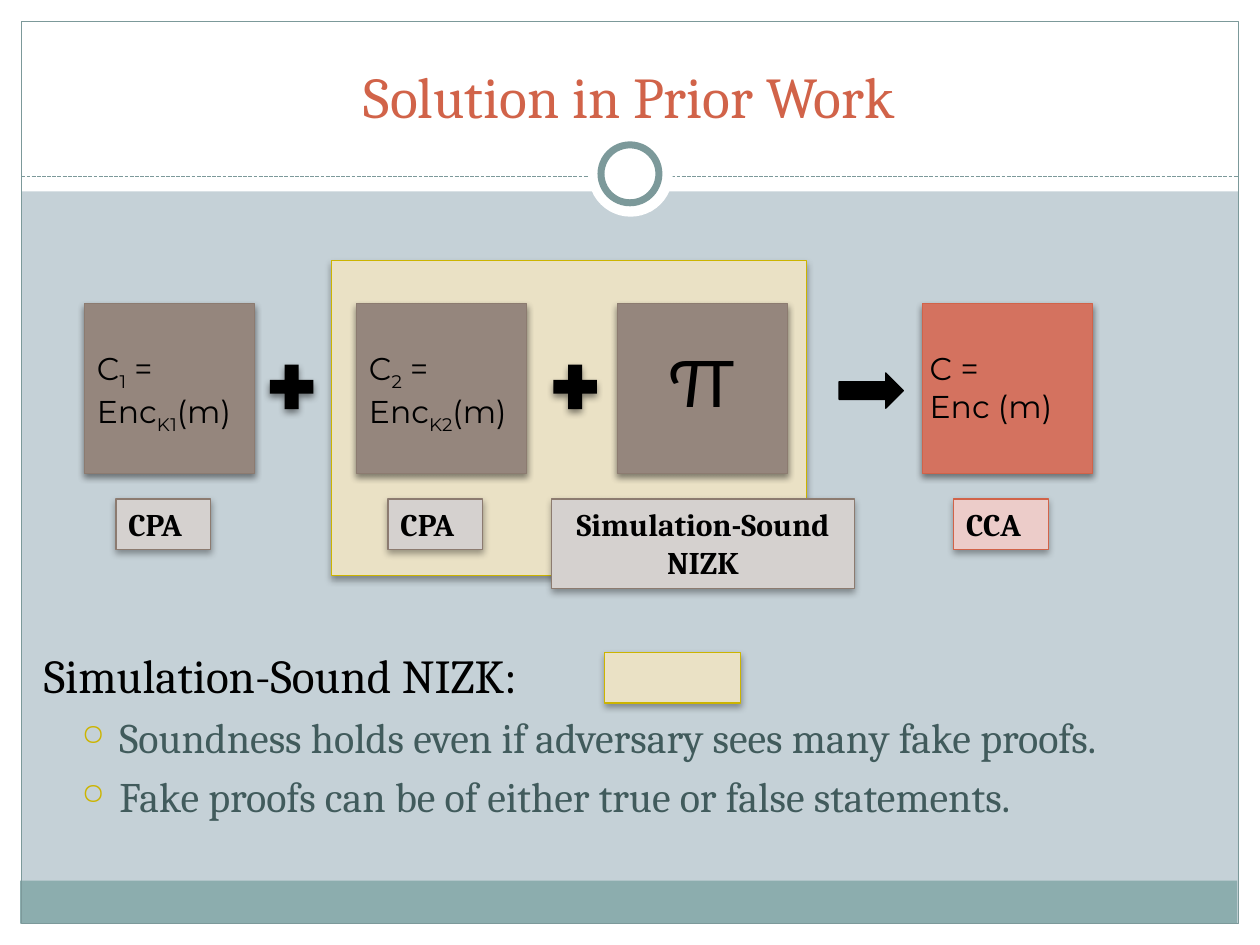
from dataclasses import dataclass

from lxml import etree
from pptx import Presentation
from pptx.dml.color import RGBColor
from pptx.enum.dml import MSO_LINE
from pptx.enum.shapes import MSO_CONNECTOR, MSO_SHAPE
from pptx.enum.text import MSO_ANCHOR, PP_ALIGN
from pptx.oxml.ns import qn
from pptx.util import Inches, Pt

RECT, OVAL = MSO_SHAPE.RECTANGLE, MSO_SHAPE.OVAL
PLUS, ARROW = MSO_SHAPE.MATH_PLUS, MSO_SHAPE.RIGHT_ARROW
LEFT, CENTER = PP_ALIGN.LEFT, PP_ALIGN.CENTER
TOP, BOTTOM = MSO_ANCHOR.TOP, MSO_ANCHOR.BOTTOM

WHITE = RGBColor(0xFF, 0xFF, 0xFF)
BLACK = RGBColor(0x00, 0x00, 0x00)
MIST = RGBColor(0xC5, 0xD1, 0xD7)
TEAL = RGBColor(0x8C, 0xAD, 0xAE)
TEAL_EDGE = RGBColor(0x7C, 0x99, 0x9A)
TEAL_TEXT = RGBColor(0x41, 0x5B, 0x5C)
RUST = RGBColor(0xD1, 0x63, 0x49)
RUST_FILL = RGBColor(0xD4, 0x72, 0x5F)
RUST_PALE = RGBColor(0xEC, 0xCC, 0xC9)
TAUPE_FILL = RGBColor(0x95, 0x86, 0x7D)
TAUPE_EDGE = RGBColor(0x8C, 0x7B, 0x70)
TAUPE_PALE = RGBColor(0xD5, 0xD1, 0xCF)
SAND = RGBColor(0xEA, 0xE1, 0xC5)
GOLD = RGBColor(0xCC, 0xB4, 0x00)

SERIF, SANS = "Cambria", "Montserrat"
BLOCK_TOP, BLOCK_SIZE = 2.41, 1.35
LABEL_TOP, LABEL_WIDTH, LABEL_HEIGHT = 3.96, 0.75, 0.4
LABEL_INSET = 0.25
FORMULA_WIDTH = 1.55


@dataclass(frozen=True)
class Style:
    fill: RGBColor | None = None
    edge: RGBColor | None = None
    edge_width: float = 0.75
    shadow: int = 0  # opacity in percent


@dataclass(frozen=True)
class Block:
    left: float
    style: Style
    formula: tuple[str, ...]
    formula_left: float
    formula_top: float = 2.72
    formula_size: int = 18
    label: str = ""
    label_style: Style | None = None


PLAIN = Style(WHITE)
TAUPE_BLOCK = Style(TAUPE_FILL, TAUPE_EDGE, shadow=45)
TAUPE_LABEL = Style(TAUPE_PALE, TAUPE_EDGE, shadow=35)
RUST_BLOCK = Style(RUST_FILL, RUST, shadow=45)
RUST_LABEL = Style(RUST_PALE, RUST, shadow=35)
SAND_PANEL = Style(SAND, GOLD, shadow=35)

BLOCKS = [
    Block(7.32, RUST_BLOCK, ("C =", "Enc (m)"), 7.28, label="CCA", label_style=RUST_LABEL),
    Block(0.67, TAUPE_BLOCK, ("C_1_ = Enc_K1_(m)",), 0.67, label="CPA", label_style=TAUPE_LABEL),
    Block(2.83, TAUPE_BLOCK, ("C_2_ = Enc_K2_(m)",), 2.83, label="CPA", label_style=TAUPE_LABEL),
    Block(4.9, TAUPE_BLOCK, ("π",), 5.23, formula_top=2.49, formula_size=50),
]

prs = Presentation()
prs.slide_width, prs.slide_height = Inches(10), Inches(7.5)
slide = prs.slides.add_slide(prs.slide_layouts[6])
slide.background.fill.solid()
slide.background.fill.fore_color.rgb = MIST


def add_shape(kind: int, left: float, top: float, width: float, height: float, style: Style):
    shape = slide.shapes.add_shape(kind, Inches(left), Inches(top), Inches(width), Inches(height))
    shape.shadow.inherit = False
    if style.fill is None:
        shape.fill.background()
    else:
        shape.fill.solid()
        shape.fill.fore_color.rgb = style.fill
    if style.edge is None:
        shape.line.fill.background()
    else:
        shape.line.color.rgb = style.edge
        shape.line.width = Pt(style.edge_width)
    if style.shadow:
        effects = shape._element.spPr.find(qn("a:effectLst"))
        cast = etree.SubElement(effects, qn("a:outerShdw"), blurRad=str(Pt(4)), dist=str(Pt(2)),
                                dir="5400000", rotWithShape="0")
        color = etree.SubElement(cast, qn("a:srgbClr"), val=str(BLACK))
        etree.SubElement(color, qn("a:alpha"), val=str(style.shadow * 1000))
    return shape


def add_box(left: float, top: float, width: float, height: float):
    return slide.shapes.add_textbox(Inches(left), Inches(top), Inches(width), Inches(height))


def add_bullet(paragraph) -> None:
    props = paragraph._p.get_or_add_pPr()
    props.set("marL", str(Inches(0.6)))
    props.set("indent", str(Inches(-0.3)))
    color = etree.SubElement(props, qn("a:buClr"))
    etree.SubElement(color, qn("a:srgbClr"), val=str(GOLD))
    etree.SubElement(props, qn("a:buSzPct"), val="70000")
    etree.SubElement(props, qn("a:buChar"), char="○")


def write(shape, text: str, *, size: float, font: str = SERIF, color: RGBColor = BLACK,
          bold: bool = False, align: int = LEFT, anchor: int = TOP,
          bullet: bool = False, before: float = 0) -> None:
    """Add a paragraph; parts between underscores become subscripts."""
    frame = shape.text_frame
    frame.word_wrap = True
    frame.vertical_anchor = anchor
    paragraph = frame.add_paragraph() if frame.text else frame.paragraphs[0]
    paragraph.alignment = align
    if bullet:
        paragraph.level = 1
        add_bullet(paragraph)
    if before:
        paragraph.space_before = Pt(before)
    for index, part in enumerate(text.split("_")):
        run = paragraph.add_run()
        run.text = part
        run.font.name, run.font.size, run.font.bold = font, Pt(size), bold
        run.font.color.rgb = color
        if index % 2:
            run.font._element.set("baseline", "-25000")


def add_label(text: str, left: float, width: float, height: float, style: Style,
              align: int = LEFT) -> None:
    label = add_shape(RECT, left, LABEL_TOP, width, height, style)
    write(label, text, size=18, bold=True, align=align)


def add_block(block: Block) -> None:
    add_shape(RECT, block.left, BLOCK_TOP, BLOCK_SIZE, BLOCK_SIZE, block.style)
    formula = add_box(block.formula_left, block.formula_top, FORMULA_WIDTH, 0.71)
    for line in block.formula:
        write(formula, line, size=block.formula_size, font=SANS)
    if block.label_style:
        add_label(block.label, block.left + LABEL_INSET, LABEL_WIDTH, LABEL_HEIGHT,
                  block.label_style)


# Page margins, footer band and frame
for margin in [(0, 7.33, 10, 0.17), (0, 0, 10, 1.52), (0, 0, 0.17, 7.5), (9.83, 0, 0.17, 7.5)]:
    add_shape(RECT, *margin, PLAIN)
add_shape(RECT, 0.16, 6.99, 9.66, 0.34, Style(TEAL))
add_shape(RECT, 0.17, 0.17, 9.66, 7.16, Style(edge=TEAL_EDGE))

# Dashed rule with ring
rule = slide.shapes.add_connector(MSO_CONNECTOR.STRAIGHT, Inches(0.17), Inches(1.4),
                                  Inches(9.83), Inches(1.4))
rule.line.color.rgb = TEAL_EDGE
rule.line.width = Pt(0.75)
rule.line.dash_style = MSO_LINE.SQUARE_DOT
etree.SubElement(rule._element.spPr, qn("a:effectLst"))
add_shape(OVAL, 4.67, 1.05, 0.67, 0.67, PLAIN)
add_shape(OVAL, 4.77, 1.15, 0.46, 0.46, Style(WHITE, TEAL_EDGE, 4))

# Title
title = add_box(0.33, 0.25, 9.33, 0.83)
write(title, "Solution in Prior Work", size=33, color=RUST, align=CENTER, anchor=BOTTOM)

# Encryption diagram
add_shape(RECT, 2.63, 2.07, 3.77, 2.5, SAND_PANEL)
for block in BLOCKS:
    add_block(block)
for plus_left in (2.08, 4.33):
    add_shape(PLUS, plus_left, 2.83, 0.47, 0.48, Style(BLACK, shadow=45))
add_shape(ARROW, 6.66, 2.96, 0.51, 0.28, Style(BLACK, BLACK))
add_label("Simulation-Sound NIZK", 4.38, 2.4, 0.71, TAUPE_LABEL, align=CENTER)

# Explanation and colour key
explanation = add_box(0.25, 5.08, 9.3, 2.26)
write(explanation, "Simulation-Sound NIZK:", size=27)
for point in ("Soundness holds even if adversary sees many fake proofs.",
              "Fake proofs can be of either true or false statements."):
    write(explanation, point, size=24, color=TEAL_TEXT, bullet=True, before=4.8)
add_shape(RECT, 4.8, 5.18, 1.08, 0.4, SAND_PANEL)

prs.save("out.pptx")
